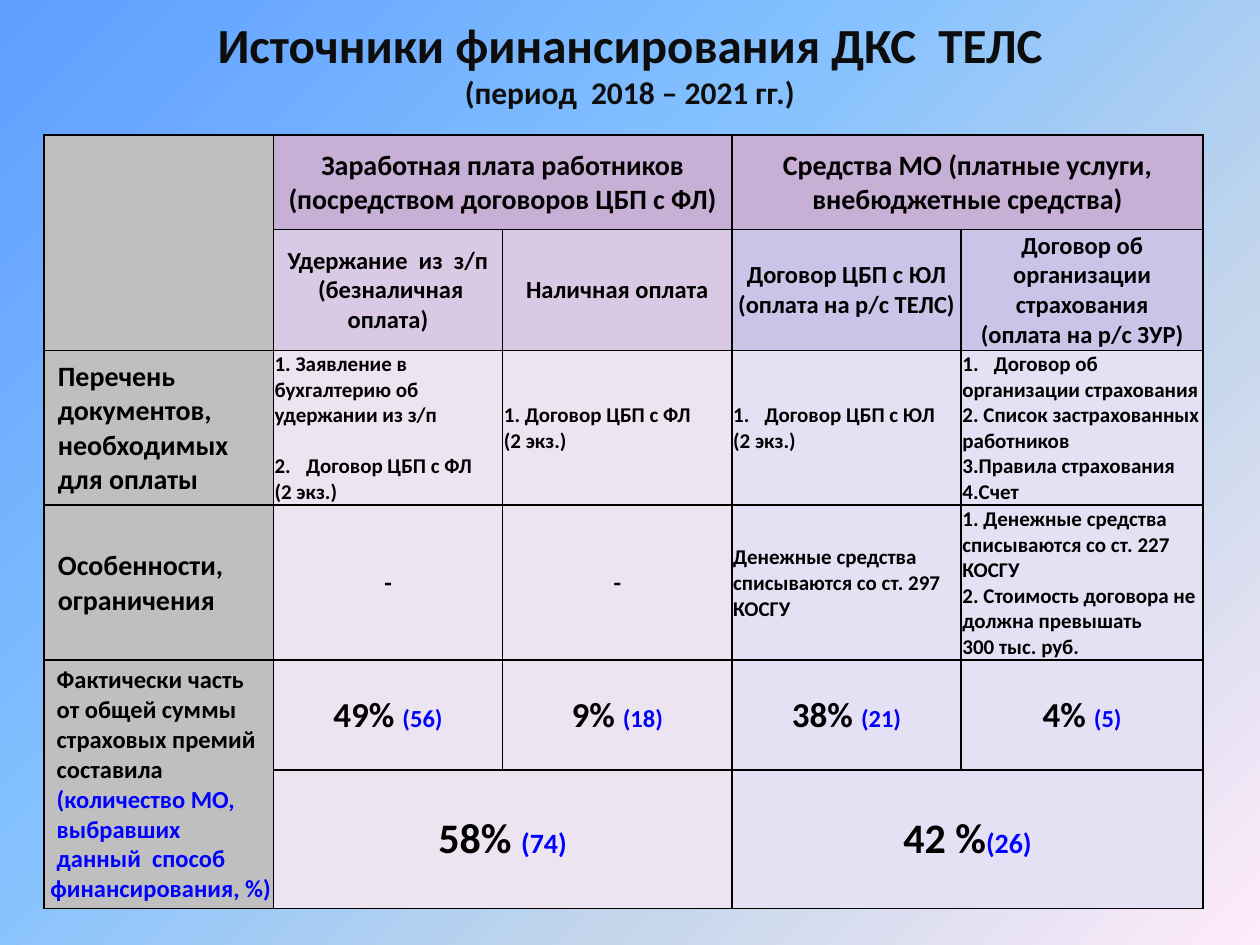
from dataclasses import dataclass
from lxml.etree import SubElement as Sub
from pptx import Presentation as Deck
from pptx.dml.color import RGBColor as Rgb
from pptx.enum.text import MSO_ANCHOR as Anchor, PP_ALIGN as Align
from pptx.oxml.ns import qn
from pptx.util import Inches as In, Pt

WIDE, HIGH = 10, 7.5
COLS = [1.82] * 4 + [1.92]
ROWS = [0.75, 0.96, 1.23, 1.23, 0.87, 1.1]


@dataclass(frozen=True)
class Theme:
    font: str = "Calibri"
    ink: str = "000000"
    head: str = "0D0D0D"
    blue: str = "0000FF"
    grey: str = "BFBFBF"
    top: str = "C8AFD6"
    subs: tuple = ("DAC9E4", "CBC4E9")   # staff pay, company funds
    body: tuple = ("EDE4F1", "E5E1F4")
    sky: tuple = ((0, "5E9EFF"), (40, "85C2FF"), (70, "C4D6EB"), (100, "FFEBFA"))
    title: int = 28
    sub: int = 18
    big: int = 16
    mid: int = 14
    small: int = 12
    sum: int = 24
    share: int = 20


T = Theme()


@dataclass
class Line:
    text: str
    num: int = 0          # automatic number, 0 for none
    gap: float = 0        # points above
    left: float = 0       # indent in inches
    tint: str = T.ink


def style(font, size, tint=T.ink):
    font.name, font.size, font.bold = T.font, Pt(size), True
    font.color.rgb = Rgb.from_string(tint)


def paint(slide):
    """Diagonal gradient behind the slide."""
    fill = slide.background.fill
    fill.gradient()
    fill.gradient_angle = 315
    stops = slide.element.find(".//" + qn("a:gsLst"))
    for old in list(stops):
        stops.remove(old)
    for pos, tint in T.sky:
        stop = Sub(stops, qn("a:gs"), pos=str(pos * 1000))
        Sub(stop, qn("a:srgbClr"), val=tint)


def head(slide, main, note):
    box = slide.shapes.title
    box.left, box.top, box.width, box.height = 0, 0, In(WIDE), In(0.99)
    frame = box.text_frame
    frame.word_wrap, frame.vertical_anchor = True, Anchor.MIDDLE
    par = frame.paragraphs[0]
    par.alignment = Align.CENTER
    for text, size in ((main, T.title), (note, T.sub)):
        if par.runs:
            par.add_line_break()
        run = par.add_run()
        run.text = text
        style(run.font, size, T.head)


def number(par, start):
    props = par._p.get_or_add_pPr()
    props.set("marL", str(In(0.25)))
    props.set("indent", str(-In(0.25)))
    Sub(props, qn("a:buFont"), typeface="+mj-lt")
    Sub(props, qn("a:buAutoNum"), type="arabicPeriod", startAt=str(start))


def edge(cell):
    props = cell._tc.get_or_add_tcPr()
    for side in ("lnL", "lnR", "lnT", "lnB"):
        line = Sub(props, qn("a:" + side), w=str(Pt(1)))
        Sub(Sub(line, qn("a:solidFill")), qn("a:srgbClr"), val=T.ink)


def grid(slide):
    frame = slide.shapes.add_table(len(ROWS), len(COLS), In(0.35), In(1.07),
                                   In(sum(COLS)), In(sum(ROWS)))
    table = frame.table
    table.first_row = table.horz_banding = False
    for col, width in zip(table.columns, COLS):
        col.width = In(width)
    for row, height in zip(table.rows, ROWS):
        row.height = In(height)
    # Borders and fills follow the column group and the row band
    for r in range(len(ROWS)):
        for c in range(len(COLS)):
            cell = table.cell(r, c)
            edge(cell)
            side = (c - 1) // 2
            tint = (T.grey if c == 0 else T.top if r == 0
                    else T.subs[side] if r == 1 else T.body[side])
            cell.fill.solid()
            cell.fill.fore_color.rgb = Rgb.from_string(tint)
            cell.vertical_anchor = Anchor.MIDDLE
            cell.margin_left = cell.margin_right = cell.margin_top = In(0.01)
            cell.margin_bottom = 0
    for r, c, down, over in ((0, 0, 1, 0), (4, 0, 1, 0), (0, 1, 0, 1),
                             (0, 3, 0, 1), (5, 1, 0, 1), (5, 3, 0, 1)):
        table.cell(r, c).merge(table.cell(r + down, c + over))
    return table


def write(cell, lines, size, align=Align.LEFT):
    frame = cell.text_frame
    for i, line in enumerate(lines):
        line = Line(line) if isinstance(line, str) else line
        par = frame.add_paragraph() if i else frame.paragraphs[0]
        par.alignment = align
        if line.gap:
            par.space_before = Pt(line.gap)
        if line.num:
            number(par, line.num)
        elif line.left:
            par._p.get_or_add_pPr().set("marL", str(In(line.left)))
        par.add_run().text = line.text
        style(par.font, size, line.tint)


def label(cell, texts, size):
    write(cell, [Line(text, left=0.1) for text in texts], size)


def share(cell, rate, count, size, low):
    par = cell.text_frame.paragraphs[0]
    par.alignment = Align.CENTER
    for text, pts, tint in ((rate, size, T.ink), (count, low, T.blue)):
        run = par.add_run()
        run.text = text
        style(run.font, pts, tint)


def main():
    deck = Deck()
    deck.slide_width, deck.slide_height = In(WIDE), In(HIGH)
    slide = deck.slides.add_slide(deck.slide_layouts[5])
    paint(slide)
    head(slide, "Источники финансирования ДКС  ТЕЛС", "(период  2018 – 2021 гг.)")
    cell = grid(slide).cell

    # Column heads
    for c, text in ((1, "Заработная плата работников (посредством договоров ЦБП с ФЛ)"),
                    (3, "Средства МО (платные услуги, внебюджетные средства)")):
        write(cell(0, c), [text], T.big, Align.CENTER)
    heads = (["Удержание  из  з/п", " (безналичная оплата)"],
             ["Наличная оплата"],
             ["Договор ЦБП с ЮЛ (оплата на р/с ТЕЛС)"],
             ["Договор об организации страхования", "(оплата на р/с ЗУР)"])
    for c, lines in enumerate(heads, 1):
        write(cell(1, c), lines, T.mid, Align.CENTER)

    # Row labels
    label(cell(2, 0), ["Перечень", "документов,", "необходимых", "для оплаты"], T.big)
    label(cell(3, 0), ["Особенности,", "ограничения"], T.big)
    facts = ["Фактически часть", "от общей суммы", "страховых премий", "составила"]
    ways = ["(количество МО,", "выбравших", "данный  способ"]
    write(cell(4, 0), [Line(text, left=0.09) for text in facts]
          + [Line(text, left=0.09, tint=T.blue) for text in ways]
          + [Line("финансирования, %)", left=0.04, tint=T.blue)], T.mid)

    # Documents
    docs = (["1. Заявление в бухгалтерию об удержании из з/п",
             Line("Договор ЦБП с ФЛ", num=2, gap=14.6), "(2 экз.)"],
            ["1. Договор ЦБП с ФЛ", "(2 экз.)"],
            [Line("Договор ЦБП с ЮЛ", num=1), "(2 экз.)"],
            [Line("Договор об", num=1), "организации страхования",
             "2. Список застрахованных работников",
             "3.Правила страхования", "4.Счет"])
    for c, lines in enumerate(docs, 1):
        write(cell(2, c), lines, T.small)

    # Limits
    for c in (1, 2):
        write(cell(3, c), ["-"], T.mid, Align.CENTER)
    write(cell(3, 3), ["Денежные средства списываются со ст. 297 КОСГУ"], T.small)
    write(cell(3, 4), ["1. Денежные средства списываются со ст. 227 КОСГУ",
                       "2. Стоимость договора не должна превышать",
                       "300 тыс. руб."], T.small)

    # Shares and their sums
    parts = (("49% ", "(56)"), ("9% ", "(18)"), ("38% ", "(21)"), ("4% ", "(5)"))
    for c, (rate, count) in enumerate(parts, 1):
        share(cell(4, c), rate, count, T.share, T.mid)
    for c, rate, count in ((1, "58% ", "(74)"), (3, "42 %", "(26)")):
        share(cell(5, c), rate, count, T.sum, T.big)

    deck.save("out.pptx")


if __name__ == "__main__":
    main()
